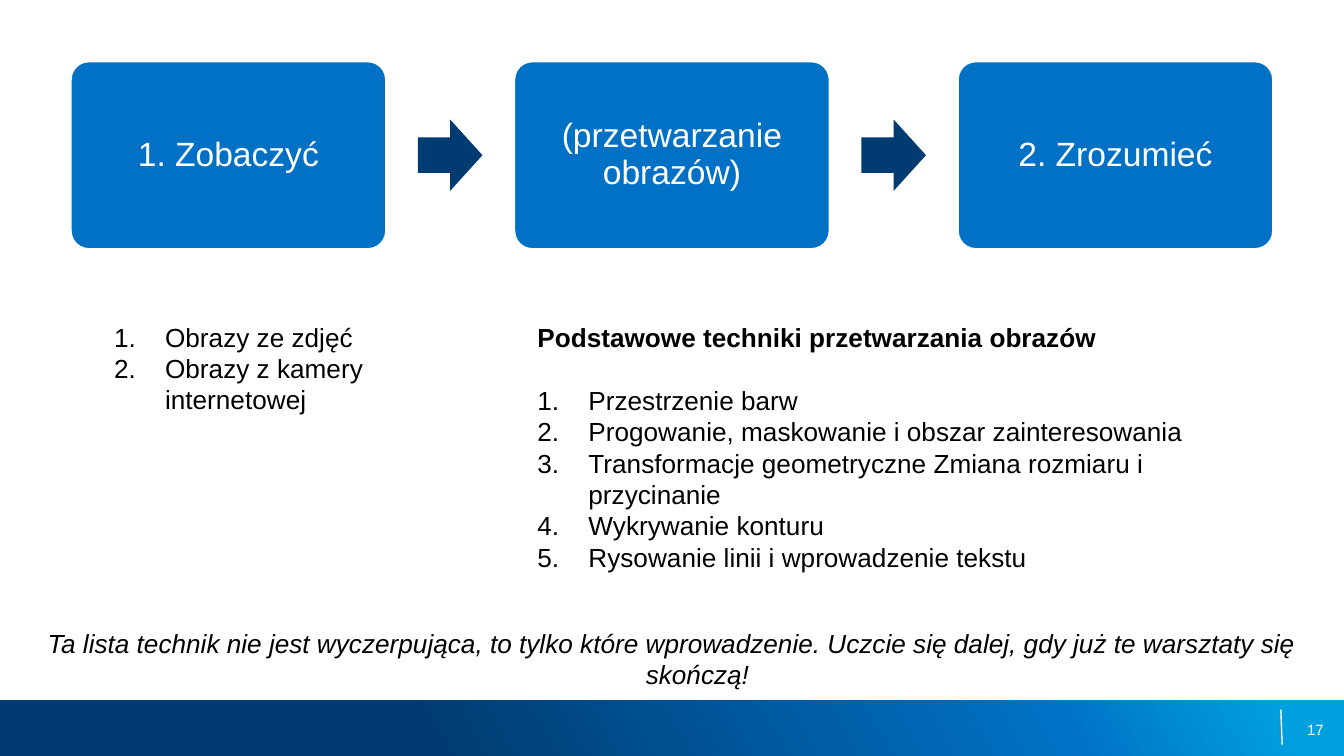
from dataclasses import dataclass

from lxml import etree
from pptx import Presentation
from pptx.dml.color import RGBColor
from pptx.enum.shapes import MSO_CONNECTOR, MSO_SHAPE
from pptx.enum.text import MSO_ANCHOR, PP_ALIGN
from pptx.oxml.ns import qn
from pptx.util import Inches, Pt


@dataclass(frozen=True)
class Theme:
    font: str = "Arial"
    black: str = "000000"
    white: str = "FFFFFF"
    navy: str = "003C71"
    blue: str = "0071C5"
    sky: str = "009FDF"
    card_size: int = 18
    body_size: int = 14
    number_size: int = 8
    indent: float = 0.38


THEME = Theme()
SLIDE_WIDTH = 10
SLIDE_HEIGHT = SLIDE_WIDTH * 9 / 16
STEPS = ["1. Zobaczyć", "(przetwarzanie obrazów)", "2. Zrozumieć"]
SOURCES = ["Obrazy ze zdjęć", "Obrazy z kamery internetowej"]
TECHNIQUES_TITLE = "Podstawowe techniki przetwarzania obrazów"
TECHNIQUES = [
    "Przestrzenie barw",
    "Progowanie, maskowanie i obszar zainteresowania",
    "Transformacje geometryczne Zmiana rozmiaru i przycinanie",
    "Wykrywanie konturu",
    "Rysowanie linii i wprowadzenie tekstu",
]
FOOTNOTE = (
    "Ta lista technik nie jest wyczerpująca, to tylko które wprowadzenie. "
    "Uczcie się dalej, gdy już te warsztaty się skończą!"
)


def add_block(slide, kind, box, color=None):
    """Add a preset shape without shadow or outline."""
    shape = slide.shapes.add_shape(kind, *map(Inches, box))
    shape.shadow.inherit = False
    shape.line.fill.background()
    if color:
        shape.fill.solid()
        shape.fill.fore_color.rgb = RGBColor.from_string(color)
    return shape


def set_frame(frame, across, down, anchor=MSO_ANCHOR.TOP):
    frame.word_wrap = True
    frame.vertical_anchor = anchor
    frame.margin_left = frame.margin_right = Inches(across)
    frame.margin_top = frame.margin_bottom = Inches(down)
    return frame


def add_text_frame(slide, box, across=0.1, down=0.05, anchor=MSO_ANCHOR.TOP):
    textbox = slide.shapes.add_textbox(*map(Inches, box))
    return set_frame(textbox.text_frame, across, down, anchor)


def write(paragraph, text, size, color, align=PP_ALIGN.LEFT, bold=False, italic=False):
    paragraph.alignment = align
    run = paragraph.add_run()
    run.text = text
    font = run.font
    font.name, font.size = THEME.font, Pt(size)
    font.bold, font.italic = bold, italic
    font.color.rgb = RGBColor.from_string(color)


def hang(paragraph):
    """Give the paragraph a hanging indent and return its properties."""
    properties = paragraph._p.get_or_add_pPr()
    properties.set("marL", str(Inches(THEME.indent)))
    properties.set("indent", str(-Inches(THEME.indent)))
    return properties


def add_numbered_list(slide, box, items, title=None):
    frame = add_text_frame(slide, box)
    paragraph = frame.paragraphs[0]
    if title:
        hang(paragraph)
        paragraph.space_after = Pt(17)
        write(paragraph, title, THEME.body_size, THEME.black, bold=True)
        paragraph = frame.add_paragraph()
    for index, item in enumerate(items):
        if index:
            paragraph = frame.add_paragraph()
        numbering = etree.SubElement(hang(paragraph), qn("a:buAutoNum"))
        numbering.set("type", "arabicPeriod")
        write(paragraph, item, THEME.body_size, THEME.black)


def add_process(slide, box, steps):
    """Spread equal cards over the box, with an arrow in each gap."""
    left, top, width, height = box
    card_width, arrow_width, arrow_height = 2.36, 0.48, 0.53
    pitch = (width - card_width) / (len(steps) - 1)
    for index, step in enumerate(steps):
        x = left + index * pitch
        card = add_block(slide, MSO_SHAPE.ROUNDED_RECTANGLE,
                         (x, top, card_width, height), THEME.blue)
        card.adjustments[0] = 0.1
        card.line.color.rgb = RGBColor.from_string(THEME.white)
        card.line.width = Pt(2)
        frame = set_frame(card.text_frame, 0.07, 0.07, MSO_ANCHOR.MIDDLE)
        paragraph = frame.paragraphs[0]
        paragraph.line_spacing = 0.9
        write(paragraph, step, THEME.card_size, THEME.white, PP_ALIGN.CENTER)
        if index:
            arrow_left = x - (pitch - card_width + arrow_width) / 2
            arrow_top = top + (height - arrow_height) / 2
            add_block(slide, MSO_SHAPE.RIGHT_ARROW,
                      (arrow_left, arrow_top, arrow_width, arrow_height), THEME.navy)


def add_footnote(slide, box, text):
    paragraph = add_text_frame(slide, box).paragraphs[0]
    hang(paragraph)
    write(paragraph, text, THEME.body_size, THEME.black, PP_ALIGN.CENTER, italic=True)


def add_footer(slide, box, number):
    left, top, width, height = box
    band = add_block(slide, MSO_SHAPE.RECTANGLE, box)
    band.fill.gradient()
    band.fill.gradient_angle = 29
    stops = band._element.spPr.find(qn("a:gradFill")).find(qn("a:gsLst"))
    for stop in list(stops):
        stops.remove(stop)
    for percent, color in [(0, THEME.navy), (32, THEME.navy), (78, THEME.blue),
                           (95, THEME.sky), (100, THEME.sky)]:
        stop = etree.SubElement(stops, qn("a:gs"), pos=str(percent * 1000))
        etree.SubElement(stop, qn("a:srgbClr"), val=color)

    right = left + width
    divider = slide.shapes.add_connector(
        MSO_CONNECTOR.STRAIGHT, Inches(right - 0.47), Inches(top + 0.07),
        Inches(right - 0.46), Inches(top + 0.33))
    divider.line.color.rgb = RGBColor.from_string(THEME.white)
    divider.line.width = Pt(0.75)
    etree.SubElement(divider._element.spPr, qn("a:effectLst"))

    frame = add_text_frame(slide, (right - 2.48, top + 0.07, 2.33, 0.3),
                           0, 0, MSO_ANCHOR.MIDDLE)
    write(frame.paragraphs[0], number, THEME.number_size, THEME.white, PP_ALIGN.RIGHT)


def main():
    presentation = Presentation()
    presentation.slide_width = Inches(SLIDE_WIDTH)
    presentation.slide_height = Inches(SLIDE_HEIGHT)
    slide = presentation.slides.add_slide(presentation.slide_layouts[6])
    add_footer(slide, (0, 5.21, SLIDE_WIDTH, 0.42), "17")
    add_numbered_list(slide, (0.75, 2.34, 2.28, 1.04), SOURCES)
    add_numbered_list(slide, (3.9, 2.34, 5.51, 1.75), TECHNIQUES, TECHNIQUES_TITLE)
    add_process(slide, (0.52, 0.45, 8.96, 1.41), STEPS)
    add_footnote(slide, (0, 4.62, SLIDE_WIDTH, 0.34), FOOTNOTE)
    presentation.save("out.pptx")


if __name__ == "__main__":
    main()
